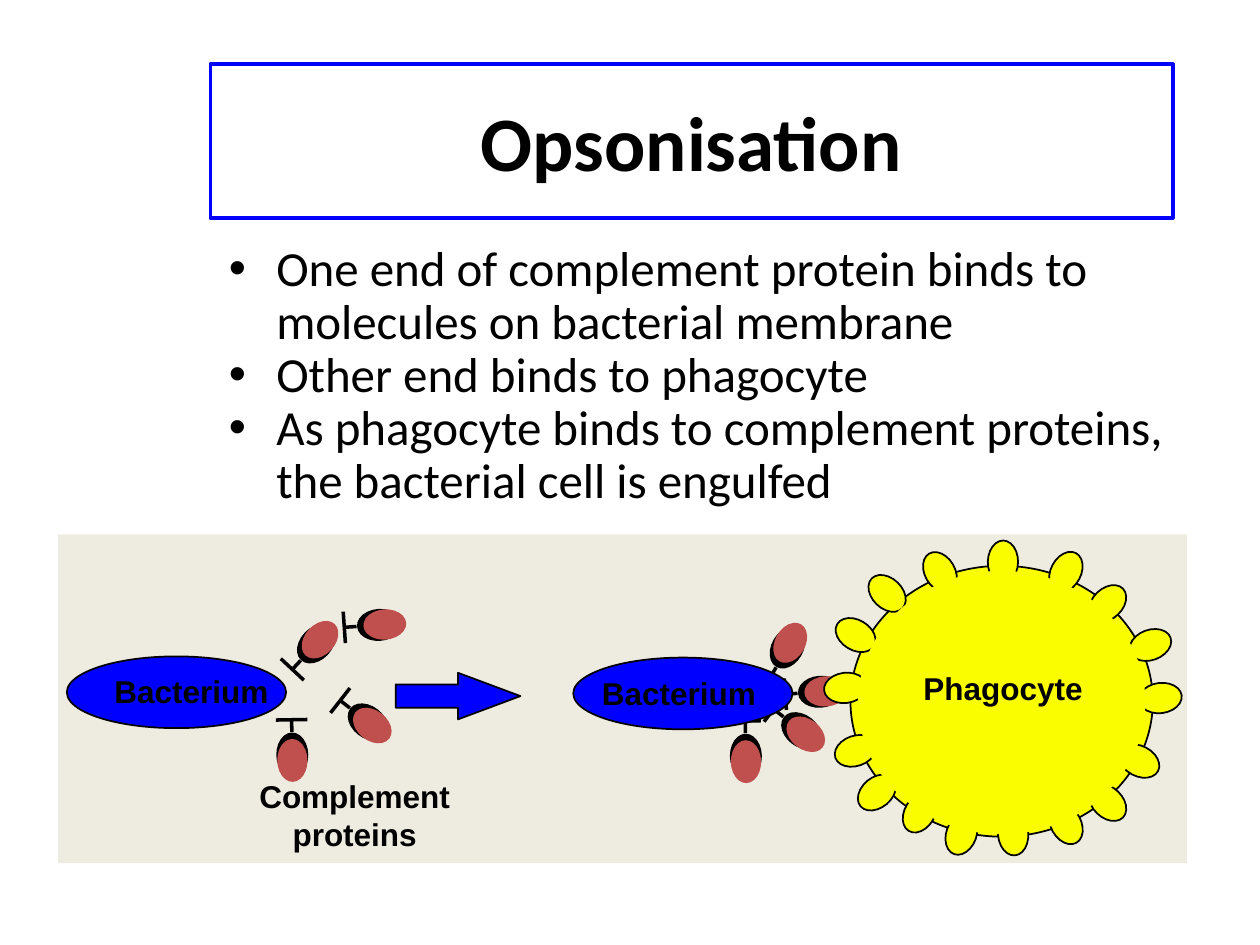
from dataclasses import dataclass
from math import cos, radians, sin

from lxml import etree
from pptx import Presentation
from pptx.dml.color import RGBColor
from pptx.enum.shapes import MSO_CONNECTOR, MSO_SHAPE
from pptx.enum.text import MSO_ANCHOR, PP_ALIGN
from pptx.oxml.ns import qn
from pptx.util import Pt

RECTANGLE, OVAL, ARROW = MSO_SHAPE.RECTANGLE, MSO_SHAPE.OVAL, MSO_SHAPE.RIGHT_ARROW
STRAIGHT = MSO_CONNECTOR.STRAIGHT
LEFT, CENTER = PP_ALIGN.LEFT, PP_ALIGN.CENTER
MIDDLE = MSO_ANCHOR.MIDDLE


@dataclass(frozen=True)
class Theme:
    black: RGBColor = RGBColor(0, 0, 0)
    blue: RGBColor = RGBColor(0, 0, 255)
    red: RGBColor = RGBColor(0xC0, 0x50, 0x4D)
    yellow: RGBColor = RGBColor(0xFA, 0xFD, 0)
    panel: RGBColor = RGBColor(0xEE, 0xEC, 0xE1)
    heading_font: str = "Calibri"
    label_font: str = "Arial"
    title_size: int = 44
    body_size: int = 28
    label_size: int = 18
    thin: int = 1
    thick: int = 2


THEME = Theme()
LOBE_SIZE = (17.3, 24.5)

BULLETS = [
    "One end of complement protein binds to molecules on bacterial membrane",
    "Other end binds to phagocyte",
    "As phagocyte binds to complement proteins, the bacterial cell is engulfed",
]
# Centre x, centre y, rotation
FREE_PROTEINS = [
    (210.2, 412.6, 128), (180.7, 367.9, 43), (167, 431.3, 179), (216.7, 357.1, 86),
]
BOUND_PROTEINS = [
    (457.9, 417.6, 128), (450, 370.1, 30), (426.2, 432, 179), (468.7, 395.3, 86),
]
RECEPTORS = [
    (483.1, 393.1, 83), (488.9, 429.1, 71), (488.9, 362.9, 121),
    (506.9, 339.1, 134), (537.1, 326.9, 150), (573.1, 321.1, 181),
    (663.1, 398.9, 83), (525.6, 464.4, 31), (578.9, 476.6, 175),
    (632.9, 344.9, 46), (632.9, 458.6, 134), (609.1, 326.9, 28),
    (657.4, 368.6, 70), (650.9, 434.9, 118), (609.1, 470.9, 151),
    (501.1, 452.9, 50), (549.4, 476.6, 20),
]


def add_figure(page, kind, frame, fill=None, line=None, line_width=THEME.thin):
    shape = page.shapes.add_shape(kind, *map(Pt, frame))
    shape.shadow.inherit = False
    if fill is None:
        shape.fill.background()
    else:
        shape.fill.solid()
        shape.fill.fore_color.rgb = fill
    if line is None:
        shape.line.fill.background()
    else:
        shape.line.color.rgb = line
        shape.line.width = Pt(line_width)
    return shape


def add_lobe(page, x, y, rotation, fill, line=None):
    """Draw a small rotated ellipse centred on x, y."""
    width, height = LOBE_SIZE
    frame = (x - width / 2, y - height / 2, width, height)
    add_figure(page, OVAL, frame, fill, line).rotation = rotation


def add_stroke(page, start, end):
    stroke = page.shapes.add_connector(STRAIGHT, *map(Pt, (*start, *end)))
    stroke.line.color.rgb = THEME.black
    stroke.line.width = Pt(THEME.thick)
    etree.SubElement(stroke._element.spPr, qn("a:effectLst"))


def add_protein(page, x, y, rotation):
    """Draw a two-tone head with a T-shaped binding end behind it."""
    dx, dy = sin(radians(rotation)), -cos(radians(rotation))

    def point(along, across=0):
        return x + along * dx - across * dy, y + along * dy + across * dx

    add_lobe(page, x, y, rotation, THEME.black, THEME.black)
    add_lobe(page, *point(3.2), rotation, THEME.red)
    add_stroke(page, point(-13), point(-20))
    add_stroke(page, point(-20, -9), point(-20, 9))


def write(frame, lines, font_name, size, bold=False, align=LEFT):
    for index, line in enumerate(lines):
        paragraph = frame.paragraphs[0] if index == 0 else frame.add_paragraph()
        paragraph.text = line
        paragraph.alignment = align
        paragraph.font.name = font_name
        paragraph.font.size = Pt(size)
        paragraph.font.bold = bold
        paragraph.font.color.rgb = THEME.black


def add_label(page, frame, lines, align=LEFT):
    box = page.shapes.add_textbox(*map(Pt, frame))
    box.text_frame.word_wrap = False
    write(box.text_frame, lines, THEME.label_font, THEME.label_size, True, align)


def add_title(page):
    box = add_figure(page, RECTANGLE, (120.2, 36.7, 550.1, 87.8),
                     line=THEME.blue, line_width=THEME.thick)
    box.text_frame.vertical_anchor = MIDDLE
    write(box.text_frame, ["Opsonisation"], THEME.heading_font,
          THEME.title_size, True, CENTER)


def add_bullets(page):
    box = page.shapes.add_textbox(*map(Pt, (123.8, 136.1, 558.7, 164.9)))
    box.text_frame.word_wrap = True
    write(box.text_frame, BULLETS, THEME.heading_font, THEME.body_size)
    for paragraph in box.text_frame.paragraphs:
        paragraph.line_spacing = 0.9
        properties = paragraph._p.get_or_add_pPr()
        properties.set("marL", str(Pt(27)))
        properties.set("indent", str(-Pt(27)))
        etree.SubElement(properties, qn("a:buFont"), typeface="Arial")
        etree.SubElement(properties, qn("a:buChar"), char="•")


def add_bacterium(page, left, top):
    add_figure(page, OVAL, (left, top, 125.3, 41), THEME.blue, THEME.black)


def add_phagocyte(page):
    add_figure(page, OVAL, (486, 323.3, 172.8, 154.8), THEME.yellow, THEME.black)
    for receptor in RECEPTORS:
        add_lobe(page, *receptor, THEME.yellow, THEME.black)
    # Covers the inner ends of the receptors
    add_figure(page, OVAL, (490.3, 326.2, 164.2, 150.5), THEME.yellow)


def add_arrow(page):
    arrow = add_figure(page, ARROW, (226.1, 384.5, 71.3, 26.6),
                       THEME.blue, THEME.black)
    arrow.adjustments[1] = 1.34


def main():
    deck = Presentation()
    deck.slide_width, deck.slide_height = Pt(720), Pt(540)
    page = deck.slides.add_slide(deck.slide_layouts[6])

    add_figure(page, RECTANGLE, (33.1, 305.3, 645.1, 187.9), THEME.panel)
    add_title(page)
    add_bullets(page)
    add_bacterium(page, 38.2, 375.1)
    for protein in FREE_PROTEINS + BOUND_PROTEINS:
        add_protein(page, *protein)
    add_phagocyte(page)
    add_arrow(page)
    add_label(page, (58.3, 380.2, 104, 28.8), ["Bacterium"])
    add_label(page, (103, 440.6, 199.4, 50.4), ["Complement", "proteins"], CENTER)
    add_label(page, (520.6, 378.7, 109, 28.8), ["Phagocyte"])
    add_bacterium(page, 327.6, 375.8)
    add_label(page, (336.2, 381.6, 103.7, 28.8), ["Bacterium"], CENTER)

    deck.save("out.pptx")


if __name__ == "__main__":
    main()
